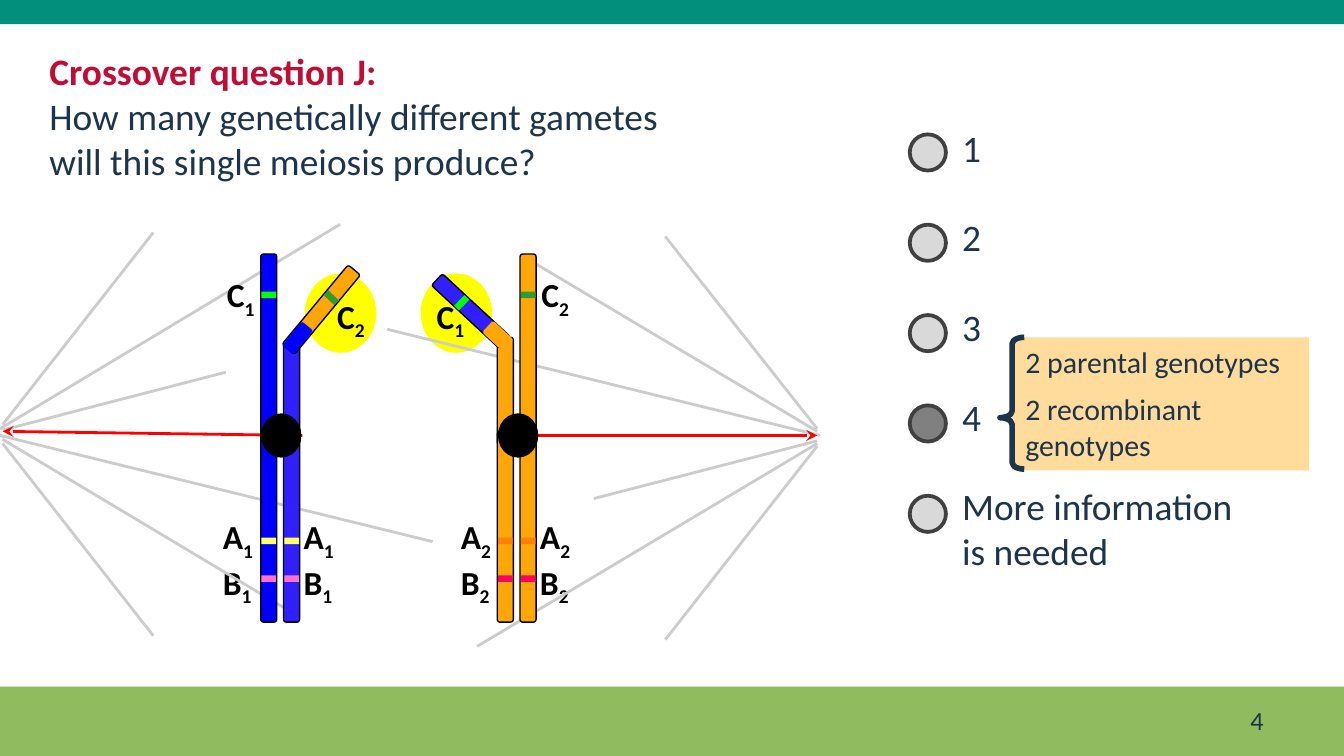
from dataclasses import dataclass

from lxml import etree
from pptx import Presentation
from pptx.dml.color import RGBColor
from pptx.enum.shapes import MSO_CONNECTOR, MSO_SHAPE
from pptx.enum.text import MSO_ANCHOR, MSO_AUTO_SIZE, PP_ALIGN
from pptx.oxml.ns import qn
from pptx.util import Pt

RECT = MSO_SHAPE.RECTANGLE
ROUND = MSO_SHAPE.ROUNDED_RECTANGLE
OVAL = MSO_SHAPE.OVAL
BRACE = MSO_SHAPE.LEFT_BRACE
STRAIGHT = MSO_CONNECTOR.STRAIGHT
TOP, MIDDLE = MSO_ANCHOR.TOP, MSO_ANCHOR.MIDDLE
LEFT, RIGHT = PP_ALIGN.LEFT, PP_ALIGN.RIGHT
GROW = MSO_AUTO_SIZE.SHAPE_TO_FIT_TEXT


@dataclass(frozen=True)
class Theme:
    font: str = "Calibri"
    ink: str = "1C344C"
    title: str = "C20C33"
    black: str = "000000"
    teal: str = "028F7C"
    green: str = "90BB5F"
    note: str = "FFDB9C"
    glow: str = "FFFF00"
    fiber: str = "CCCCCC"
    pull: str = "FF0000"
    blue: str = "0000FF"
    violet: str = "311FFF"
    orange: str = "FFA608"
    a_one: str = "FFFF66"
    a_two: str = "FF8000"
    b_one: str = "FF6FCF"
    b_two: str = "FF0064"
    c_one: str = "00FF00"
    c_two: str = "339933"
    button: str = "D9D9D9"
    chosen: str = "808080"
    ring: str = "404040"
    body: int = 20
    gene: int = 18
    small: int = 16
    number: int = 14


THEME = Theme()
ROD = 8.6
BLUE_X, VIOLET_X, INNER_X, OUTER_X = 139.7, 151.9, 266.4, 278.6


def add_shape(slide, kind, box, fill=None, line=None, width=0.75, turn=0):
    shape = slide.shapes.add_shape(kind, *map(Pt, box))
    shape.shadow.inherit = False
    shape.rotation = turn
    if fill:
        shape.fill.solid()
        shape.fill.fore_color.rgb = RGBColor.from_string(fill)
    else:
        shape.fill.background()
    if line:
        shape.line.color.rgb = RGBColor.from_string(line)
        shape.line.width = Pt(width)
    else:
        shape.line.fill.background()
    return shape


def add_line(slide, start, end, color, arrow=False):
    """Draw a line, with an optional arrowhead at its start."""
    line = slide.shapes.add_connector(STRAIGHT, *map(Pt, start + end))
    line.line.color.rgb = RGBColor.from_string(color)
    line.line.width = Pt(1.5)
    if arrow:
        etree.SubElement(line.line._get_or_add_ln(), qn("a:headEnd"), type="stealth")
    etree.SubElement(line._element.spPr, qn("a:effectLst"))


def style(run, size, color, bold=False):
    font = run.font
    font.name, font.size, font.bold = THEME.font, Pt(size), bold
    font.color.rgb = RGBColor.from_string(color)


def fill_text(shape, text, size, gap=0, align=LEFT, anchor=TOP):
    frame = shape.text_frame
    frame.word_wrap = True
    frame.auto_size = GROW
    frame.vertical_anchor = anchor
    frame.text = text
    for para in frame.paragraphs:
        para.alignment = align
        para.space_after = Pt(gap)
        for run in para.runs:
            style(run, size, THEME.ink)
    return frame


def add_text(slide, box, text, size, **rest):
    return fill_text(slide.shapes.add_textbox(*map(Pt, box)), text, size, **rest)


def add_genes(slide, box, names):
    """Label genes such as A1, one a line, with the digit as a subscript."""
    frame = add_text(slide, box, "\n".join(name[0] for name in names), THEME.gene)
    for para, name in zip(frame.paragraphs, names):
        para.add_run().text = name[1]
        for run in para.runs:
            style(run, THEME.gene, THEME.black, True)
        para.runs[1]._r.get_or_add_rPr().set("baseline", "-25000")


def add_rod(slide, x, y, height, fill, turn=0):
    add_shape(slide, ROUND, (x, y, ROD, height), fill, THEME.black, turn=turn)


def add_mark(slide, x, y, fill, turn=0):
    add_shape(slide, RECT, (x, y, 7.9, 3.6), fill, turn=turn)


def draw_spindle(slide):
    fibers = [
        ((437.8, 231.1), (286.6, 141.1)), ((437.8, 229.7), (356.4, 126.7)),
        ((439.2, 233.3), (207.4, 176.4)), ((437.8, 237.6), (255.6, 346.3)),
        ((437.8, 239), (356.4, 342.7)), ((437.8, 236.2), (318.2, 267.1)),
        ((1.4, 235.4), (151.9, 325.4)), ((1.4, 237.6), (82.1, 340.6)),
        ((0, 233.3), (231.8, 290.2)), ((0, 229.7), (182.2, 120.2)),
        ((1.4, 227.5), (82.1, 124.6)), ((1.4, 230.4), (121, 199.4)),
    ]
    for pole, end in fibers:
        add_line(slide, pole, end, THEME.fiber)
    add_line(slide, (437.8, 233.3), (277.2, 233.3), THEME.pull, True)
    add_line(slide, (1.4, 231.1), (162, 233.3), THEME.pull, True)


def draw_rods(slide):
    pairs = [
        (((INNER_X, 180.7, THEME.orange), (OUTER_X, 136.1, THEME.orange)), 267.1),
        (((BLUE_X, 136.1, THEME.blue), (VIOLET_X, 183.6, THEME.violet)), 140.2),
    ]
    for rods, center in pairs:
        for x, top, fill in rods:
            add_rod(slide, x, top, 238.3 - top, fill)
            add_rod(slide, x, 231.1, 102.2, fill)
        add_shape(slide, OVAL, (center, 221.8, 20.9, 23), THEME.black, THEME.black)
    add_rod(slide, 167.8, 138.2, 55.4, THEME.orange, 39.8)
    add_rod(slide, 248, 141.8, 49.7, THEME.violet, 312.9)
    add_shape(slide, ROUND, (151.2, 177.1, 16.6, 7.9), THEME.blue, turn=309)
    add_shape(slide, ROUND, (259.2, 175.7, 15.1, 8.6), THEME.orange, turn=43)


def draw_marks(slide):
    sides = [
        ((BLUE_X, VIOLET_X), THEME.a_one, THEME.b_one),
        ((INNER_X, OUTER_X), THEME.a_two, THEME.b_two),
    ]
    for places, a_fill, b_fill in sides:
        for x in places:
            add_mark(slide, x + 0.4, 288, a_fill)
            add_mark(slide, x + 0.4, 308.2, b_fill)
    add_mark(slide, BLUE_X + 0.4, 156.2, THEME.c_one)
    add_mark(slide, OUTER_X + 0.4, 156.2, THEME.c_two)
    add_mark(slide, 173.5, 157.7, THEME.c_two, 43.5)
    add_mark(slide, 243.4, 160.4, THEME.c_one, 314)


def draw_cell(slide):
    for x, digit in ((112.3, "1"), (282.2, "2"), (155.5, "1"), (239.8, "2")):
        add_genes(slide, (x, 272.9, 38, 51.1), ("A" + digit, "B" + digit))
    for x in (163.4, 225.4):
        add_shape(slide, OVAL, (x, 146.5, 38.2, 42.5), THEME.glow)
    draw_spindle(slide)
    draw_rods(slide)
    for x, y, name in ((226.8, 154.8, "C1"), (283, 143.3, "C2"),
                       (114.5, 143.3, "C1"), (173.5, 154.8, "C2")):
        add_genes(slide, (x, y, 31, 28.8), (name,))
    draw_marks(slide)


def draw_choices(slide):
    for row in range(5):
        fill = THEME.chosen if row == 3 else THEME.button
        add_shape(slide, OVAL, (487.4, 72 + 48.4 * row, 19.4, 19.4), fill, THEME.ring, 2)
    add_text(slide, (508.3, 63.4, 159.8, 249.8),
             "1\n2\n3\n4\nMore information is needed", THEME.body, gap=24)


def draw_note(slide):
    card = add_shape(slide, RECT, (542.2, 180.7, 159.1, 71.3), THEME.note)
    fill_text(card, "2 parental genotypes\n2 recombinant genotypes", THEME.small, gap=6)
    card.text_frame.paragraphs[1].space_after = Pt(0)
    brace = add_shape(slide, BRACE, (535.7, 180.7, 13, 70.6), line=THEME.ink, width=3)
    brace.adjustments[0], brace.adjustments[1] = 0.27, 0.61


def main():
    deck = Presentation()
    deck.slide_width, deck.slide_height = Pt(720), Pt(405)
    slide = deck.slides.add_slide(deck.slide_layouts[6])
    head = add_text(slide, (19.4, 22.3, 364.3, 79.9),
                    "Crossover question J:\nHow many genetically different gametes "
                    "will this single meiosis produce?", THEME.body)
    style(head.paragraphs[0].runs[0], THEME.body, THEME.title, True)
    draw_cell(slide)
    add_shape(slide, RECT, (0, 367.9, 722.9, 38.2), THEME.green)
    add_shape(slide, RECT, (0, 0, 722.9, 13), THEME.teal)
    draw_choices(slide)
    add_text(slide, (516.2, 375.1, 167.8, 21.6), "4", THEME.number,
             align=RIGHT, anchor=MIDDLE)
    draw_note(slide)
    deck.save("out.pptx")


if __name__ == "__main__":
    main()
